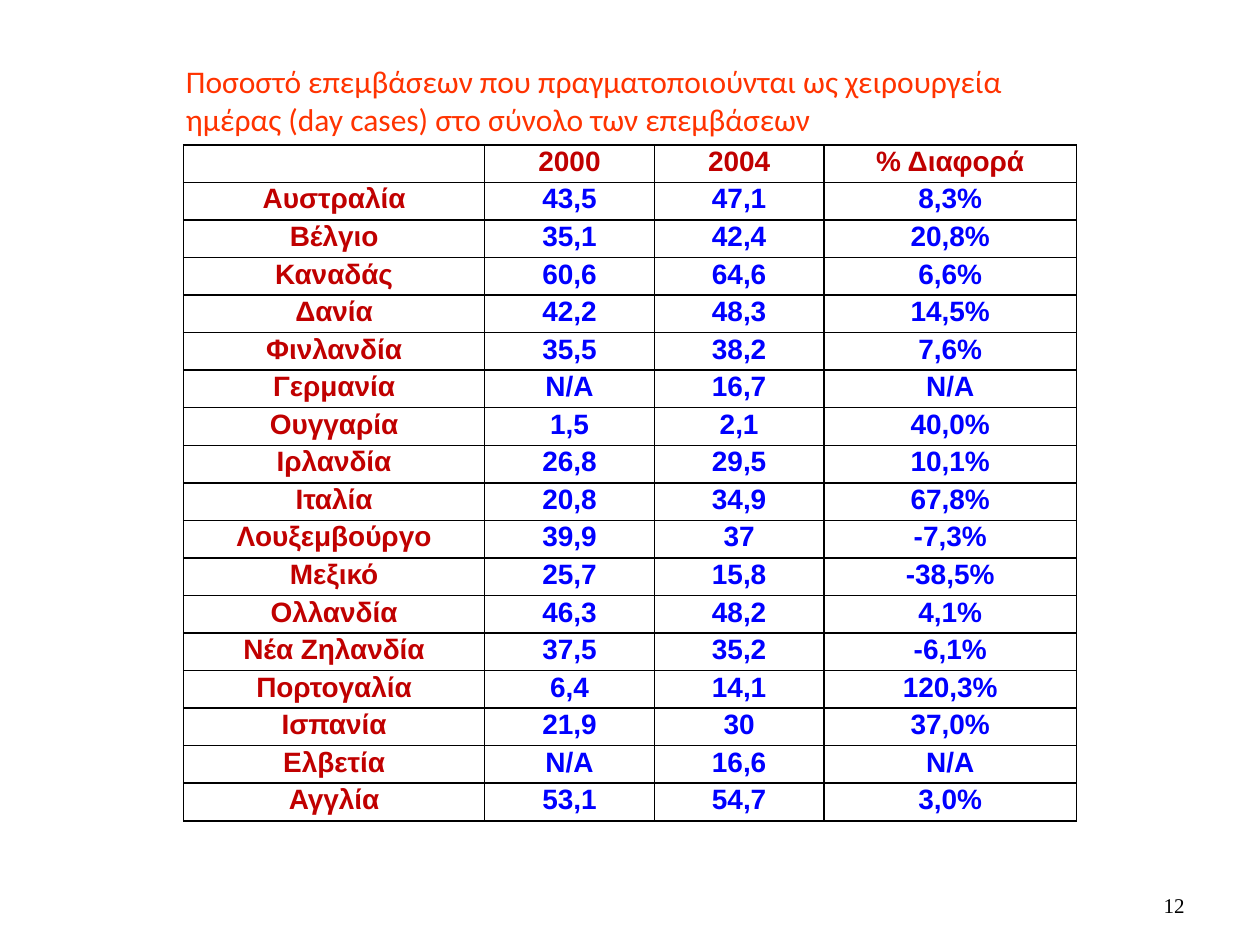
"""Build a slide with a table of day-case surgery rates by country."""
from lxml.etree import SubElement
from pptx import Presentation
from pptx.dml.color import RGBColor
from pptx.enum.text import MSO_ANCHOR as Anchor, PP_ALIGN as Align
from pptx.oxml.ns import qn
from pptx.util import Cm, Pt

COLORS = {"title": "FF3300", "label": "C00000", "value": "0000FF",
          "ink": "000000", "paper": "FFFFFF"}
TITLE = ["Ποσοστό επεμβάσεων που πραγματοποιούνται ως χειρουργεία",
         "ημέρας (day cases) στο σύνολο των επεμβάσεων"]
ROWS = [
    ("", "2000", "2004", "% Διαφορά"),
    ("Αυστραλία", "43,5", "47,1", "8,3%"),
    ("Βέλγιο", "35,1", "42,4", "20,8%"),
    ("Καναδάς", "60,6", "64,6", "6,6%"),
    ("Δανία", "42,2", "48,3", "14,5%"),
    ("Φινλανδία", "35,5", "38,2", "7,6%"),
    ("Γερμανία", "N/A", "16,7", "N/A"),
    ("Ουγγαρία", "1,5", "2,1", "40,0%"),
    ("Ιρλανδία", "26,8", "29,5", "10,1%"),
    ("Ιταλία", "20,8", "34,9", "67,8%"),
    ("Λουξεμβούργο", "39,9", "37", "-7,3%"),
    ("Μεξικό", "25,7", "15,8", "-38,5%"),
    ("Ολλανδία", "46,3", "48,2", "4,1%"),
    ("Νέα Ζηλανδία", "37,5", "35,2", "-6,1%"),
    ("Πορτογαλία", "6,4", "14,1", "120,3%"),
    ("Ισπανία", "21,9", "30", "37,0%"),
    ("Ελβετία", "N/A", "16,6", "N/A"),
    ("Αγγλία", "53,1", "54,7", "3,0%"),
]
COLUMN_WIDTHS = [Cm(6.07), Cm(3.42), Cm(3.42), Cm(5.09)]
TABLE_HEIGHT = Cm(13.63)
EMPTY_CELL_SIZE = Pt(10)


def write(para, text, *, font, size, color, bold=False, align=Align.LEFT, spacing=None):
    para.alignment = align
    para.line_spacing = spacing
    if not text:
        para._p.get_or_add_endParaRPr().set("sz", str(EMPTY_CELL_SIZE.centipoints))
        return
    span = para.add_run()
    span.text = text
    span.font.name = font
    span.font.size = Pt(size)
    span.font.bold = bold
    span.font.color.rgb = RGBColor.from_string(COLORS[color])


def draw_borders(cell, color, width):
    properties = cell._tc.get_or_add_tcPr()
    for side in ("a:lnL", "a:lnR", "a:lnT", "a:lnB"):
        line = SubElement(properties, qn(side), w=str(width))
        fill = SubElement(line, qn("a:solidFill"))
        SubElement(fill, qn("a:srgbClr"), val=COLORS[color])


deck = Presentation()
deck.slide_width = Cm(25.4)
deck.slide_height = Cm(19.05)
page = deck.slides.add_slide(deck.slide_layouts[6])

number_box = page.shapes.add_textbox(Cm(18.2), Cm(17.35), Cm(5.93), Cm(1.27))
number_box.text_frame.word_wrap = True
number_box.text_frame.vertical_anchor = Anchor.BOTTOM
write(number_box.text_frame.paragraphs[0], "12", font="Times New Roman", size=12,
      color="ink", align=Align.RIGHT)

table = page.shapes.add_table(len(ROWS), len(COLUMN_WIDTHS), Cm(3.7), Cm(2.92),
                              sum(COLUMN_WIDTHS), TABLE_HEIGHT).table
table.first_row = False
table.horz_banding = False
for column, width in zip(table.columns, COLUMN_WIDTHS):
    column.width = width
for row_index, row in enumerate(ROWS):
    table.rows[row_index].height = TABLE_HEIGHT // len(ROWS)
    for column_index, text in enumerate(row):
        cell = table.cell(row_index, column_index)
        draw_borders(cell, "ink", Pt(1))
        cell.fill.solid()
        cell.fill.fore_color.rgb = RGBColor.from_string(COLORS["paper"])
        cell.margin_top = Cm(0.09)
        cell.margin_bottom = Cm(0.12)
        cell.vertical_anchor = Anchor.BOTTOM
        is_label = row_index == 0 or column_index == 0
        write(cell.text_frame.paragraphs[0], text, font="Arial", size=16, bold=True,
              color="label" if is_label else "value", align=Align.CENTER, spacing=0.8)

title_box = page.shapes.add_textbox(Cm(3.5), Cm(1.12), Cm(18.75), Cm(1.78))
title_box.text_frame.word_wrap = True
title_box.text_frame.add_paragraph()
for para, text in zip(title_box.text_frame.paragraphs, TITLE):
    write(para, text, font="Calibri", size=18, color="title")

deck.save("out.pptx")
